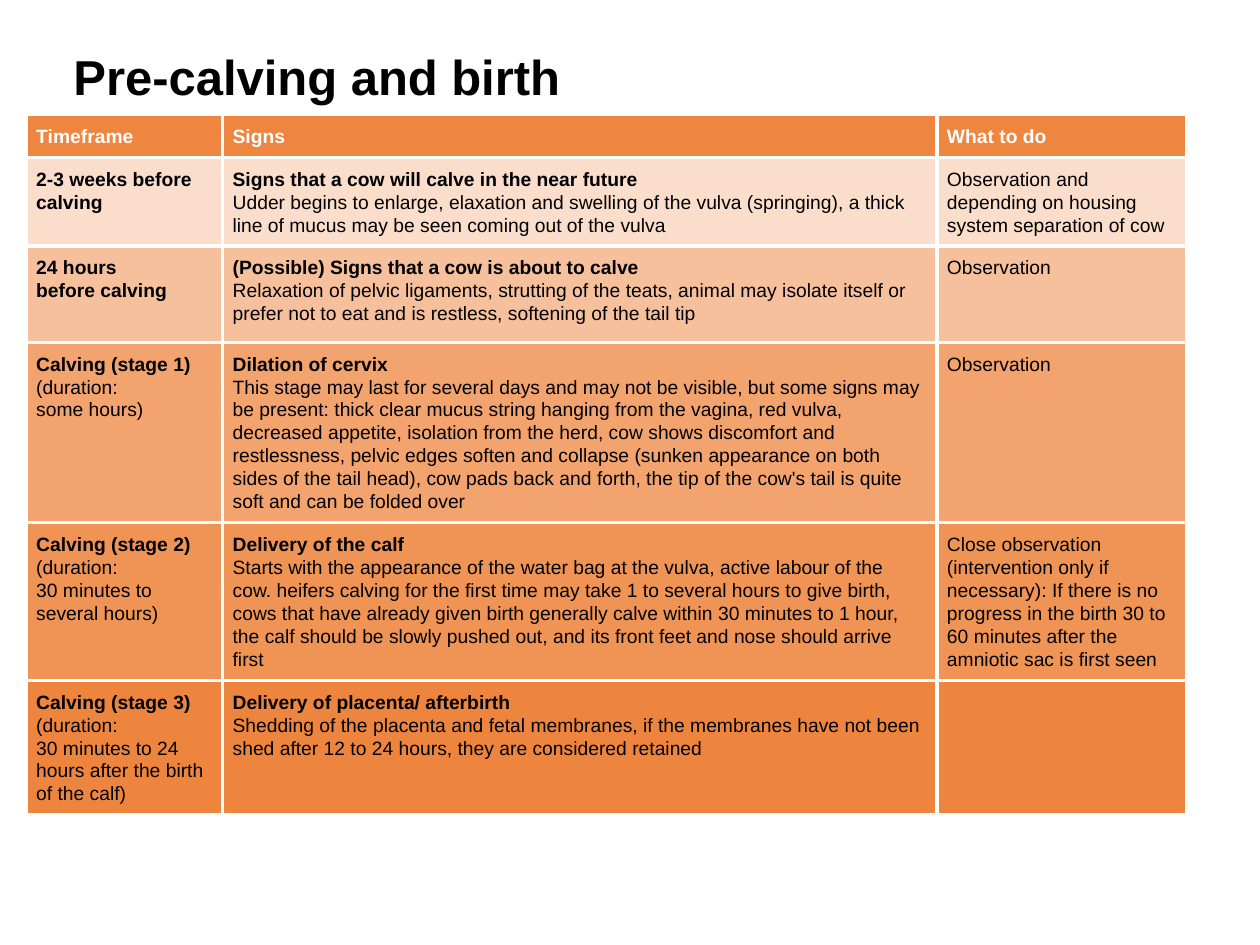
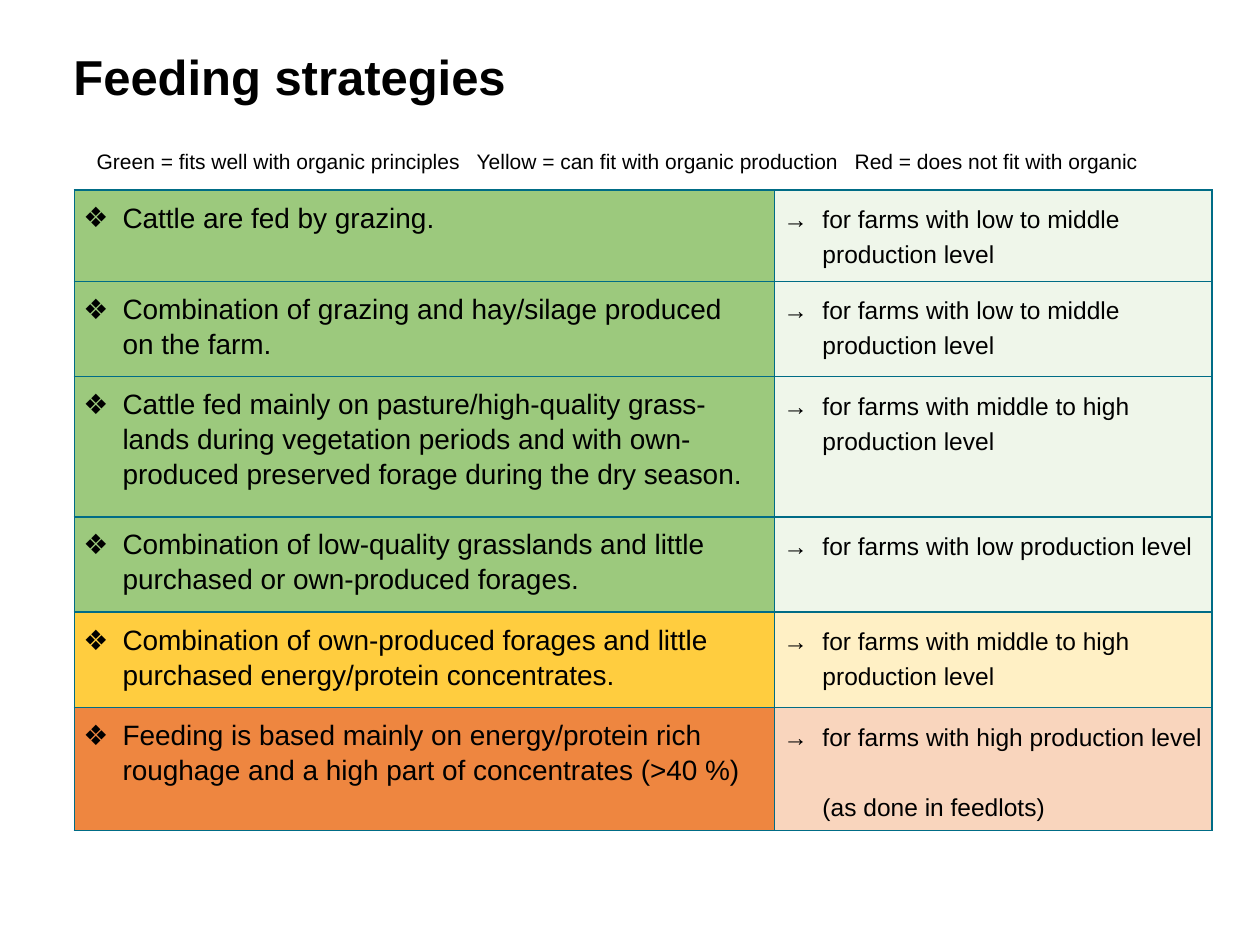
import pptx
import pptx.dml.color
import pptx.enum.text
import pptx.oxml
import pptx.oxml.ns
import pptx.util
from dataclasses import dataclass

Cm = pptx.util.Cm
Pt = pptx.util.Pt
MARGINS = ("margin_left", "margin_top", "margin_right", "margin_bottom")


@dataclass(frozen=True)
class Theme:
    font: str = "Arial"
    black: str = "000000"
    white: str = "FFFFFF"
    orange: str = "EE8640"
    teal: str = "006C86"
    stages: tuple = ("FADDCA", "F6C09C", "F2A36E", "F09456", "EE853E")
    green: tuple = ("9CC97D", "EFF6EA")
    yellow: tuple = ("FFCD3F", "FFF0C5")
    red: tuple = ("EE8640", "F9D5BD")
    title: int = 28
    strategy: int = 16
    farms: int = 14
    legend: int = 12
    table: int = 11


def rgb(color):
    return pptx.dml.color.RGBColor.from_string(color)


def xml(source):
    return pptx.oxml.parse_xml(source.replace(">", f" {pptx.oxml.ns.nsdecls('a')}>", 1))


def apply(obj, formats):
    for name, value in formats.items():
        setattr(obj, name, value)


class Deck:
    def __init__(self, theme):
        self.theme = theme
        self.prs = pptx.Presentation()
        self.prs.slide_width, self.prs.slide_height = Cm(25.4), Cm(19.05)
        self.s = None

    def paragraph(self, p, text, size, bold=False, color=None, **formats):
        p.text = text
        apply(p, formats)
        for r in p.runs:
            apply(r.font, {"name": self.theme.font, "size": Pt(size), "bold": bold})
            r.font.color.rgb = rgb(color or self.theme.black)

    def slide(self, title):
        self.s = self.prs.slides.add_slide(self.prs.slide_layouts[5])
        sp = self.s.shapes.title
        apply(sp, {"left": Cm(1.48), "top": Cm(0.64), "width": Cm(22.9), "height": Cm(1.93)})
        tf = sp.text_frame
        apply(tf, dict(zip(MARGINS, (0, 0, Cm(0.25), Cm(0.13)))))
        tf.vertical_anchor = pptx.enum.text.MSO_ANCHOR.MIDDLE
        self.paragraph(tf.paragraphs[0], title, self.theme.title, True,
                       alignment=pptx.enum.text.PP_ALIGN.LEFT)

    def legend(self, items, left, top, width, height, tabs):
        tf = self.s.shapes.add_textbox(Cm(left), Cm(top), Cm(width), Cm(height)).text_frame
        tf.word_wrap = True
        p = tf.paragraphs[0]
        stops = "".join(f'<a:tab pos="{Cm(t)}" algn="l"/>' for t in tabs)
        p._p.get_or_add_pPr().append(xml(f"<a:tabLst>{stops}</a:tabLst>"))
        self.paragraph(p, "\t".join(items), self.theme.legend)

    def table(self, left, top, cols, rows):
        frame = self.s.shapes.add_table(len(rows), len(cols), Cm(left), Cm(top),
                                        Cm(sum(cols)), Cm(sum(rows)))
        table = frame.table
        apply(table, {"first_row": False, "horz_banding": False})
        for col, width in zip(table.columns, cols):
            col.width = Cm(width)
        for row, height in zip(table.rows, rows):
            row.height = Cm(height)
        return table

    def style_cell(self, cell, fill, border, weight, margin):
        cell.fill.solid()
        cell.fill.fore_color.rgb = rgb(fill)
        apply(cell, dict.fromkeys(MARGINS, Cm(margin)))
        for i, side in enumerate("LRTB"):
            cell._tc.tcPr.insert(i, xml(
                f'<a:ln{side} w="{Pt(weight)}"><a:solidFill><a:srgbClr val="{border}"/>'
                f"</a:solidFill></a:ln{side}>"))

    def bullet(self, p, mark, indent):
        pPr = p._p.get_or_add_pPr()
        pPr.set("marL", str(Cm(indent)))
        if mark:
            pPr.set("indent", str(-Cm(indent)))
            pPr.append(pptx.oxml.parse_xml(
                f'<a:buFont {pptx.oxml.ns.nsdecls("a")} typeface="{self.theme.font}"/>'))
            pPr.append(pptx.oxml.parse_xml(
                f'<a:buChar {pptx.oxml.ns.nsdecls("a")} char="{mark}"/>'))


HEADINGS = ("Timeframe", "Signs", "What to do")

# Each cell is a bold lead and the plain text below it.
CALVING = (
    (("2-3 weeks before calving", ""),
     ("Signs that a cow will calve in the near future",
      "Udder begins to enlarge, elaxation and swelling of the vulva (springing), a thick "
      "line of mucus may be seen coming out of the vulva"),
     ("", "Observation and depending on housing system separation of cow")),
    (("24 hours\nbefore calving", ""),
     ("(Possible) Signs that a cow is about to calve",
      "Relaxation of pelvic ligaments, strutting of the teats, animal may isolate itself or "
      "prefer not to eat and is restless, softening of the tail tip"),
     ("", "Observation")),
    (("Calving (stage 1)", "(duration:\nsome hours)"),
     ("Dilation of cervix",
      "This stage may last for several days and may not be visible, but some signs may be "
      "present: thick clear mucus string hanging from the vagina, red vulva, decreased "
      "appetite, isolation from the herd, cow shows discomfort and restlessness, pelvic edges "
      "soften and collapse (sunken appearance on both sides of the tail head), cow pads back "
      "and forth, the tip of the cow's tail is quite soft and can be folded over"),
     ("", "Observation")),
    (("Calving (stage 2)", "(duration:\n30 minutes to several hours)"),
     ("Delivery of the calf",
      "Starts with the appearance of the water bag at the vulva, active labour of the cow. "
      "heifers calving for the first time may take 1 to several hours to give birth, cows that "
      "have already given birth generally calve within 30 minutes to 1 hour, the calf should "
      "be slowly pushed out, and its front feet and nose should arrive first"),
     ("", "Close observation (intervention only if necessary): If there is no progress in the "
          "birth 30 to 60 minutes after the amniotic sac is first seen")),
    (("Calving (stage 3)", "(duration:\n30 minutes to 24 hours after the birth of the calf)"),
     ("Delivery of placenta/ afterbirth",
      "Shedding of the placenta and fetal membranes, if the membranes have not been shed "
      "after 12 to 24 hours, they are considered retained"),
     ("", "")),
)

LEGEND = ("Green = fits well with organic principles",
          "Yellow = can fit with organic production",
          "Red = does not fit with organic")

STRATEGIES = (
    ("green", "Cattle are fed by grazing.",
     "for farms with low to middle\nproduction level"),
    ("green", "Combination of grazing and hay/silage produced\non the farm.",
     "for farms with low to middle\nproduction level"),
    ("green", "Cattle fed mainly on pasture/high-quality grass-lands during vegetation periods "
              "and with own-produced preserved forage during the dry season.",
     "for farms with middle to high production level"),
    ("green", "Combination of low-quality grasslands and little purchased or own-produced "
              "forages.",
     "for farms with low production level"),
    ("yellow", "Combination of own-produced forages and little purchased energy/protein "
               "concentrates.",
     "for farms with middle to high production level"),
    ("red", "Feeding is based mainly on energy/protein rich roughage and a high part of "
            "concentrates (>40 %)",
     "for farms with high production level"),
)
FEEDLOT_NOTE = "(as done in feedlots)"


def calving_slide(deck):
    th = deck.theme
    deck.slide("Pre-calving and birth")
    table = deck.table(0.53, 2.31, (3.96, 14.4, 5.03), (0.84, 1.77, 1.94, 3.63, 3.18, 2.69))
    rows = [[(heading, "") for heading in HEADINGS], *CALVING]
    for i, (row, fill) in enumerate(zip(rows, (th.orange, *th.stages))):
        color = th.black if i else th.white
        for j, (lead, body) in enumerate(row):
            cell = table.cell(i, j)
            deck.style_cell(cell, fill, th.white, 2.25, 0.2)
            tf = cell.text_frame
            parts = [(text, bold) for text, bold in ((lead, True), (body, False)) if text]
            for k, (text, bold) in enumerate(parts):
                p = tf.add_paragraph() if k else tf.paragraphs[0]
                deck.paragraph(p, text, th.table, bold, color, line_spacing=1.07)


def feeding_slide(deck):
    th = deck.theme
    spacing = {"line_spacing": Pt(20), "space_after": Pt(6)}
    deck.slide("Feeding strategies")
    table = deck.table(1.5, 3.83, (14.11, 8.82), (1.84, 1.92, 2.83, 1.92, 1.92, 2.46))
    ratings = {"green": th.green, "yellow": th.yellow, "red": th.red}
    for i, (rating, *texts) in enumerate(STRATEGIES):
        columns = zip(texts, ratings[rating], "❖→", (th.strategy, th.farms))
        for j, (text, fill, mark, size) in enumerate(columns):
            cell = table.cell(i, j)
            deck.style_cell(cell, fill, th.teal, 1, 0.18)
            p = cell.text_frame.paragraphs[0]
            deck.bullet(p, mark, 0.79)
            deck.paragraph(p, text, size, **spacing)
    p = cell.text_frame.add_paragraph()
    deck.bullet(p, None, 0.79)
    deck.paragraph(p, FEEDLOT_NOTE, th.farms, space_before=Pt(14), **spacing)
    deck.legend(LEGEND, 1.7, 2.87, 21.7, 1.27, (7.66, 15.28))


def main():
    deck = Deck(Theme())
    calving_slide(deck)
    feeding_slide(deck)
    deck.prs.save("out.pptx")


if __name__ == "__main__":
    main()
